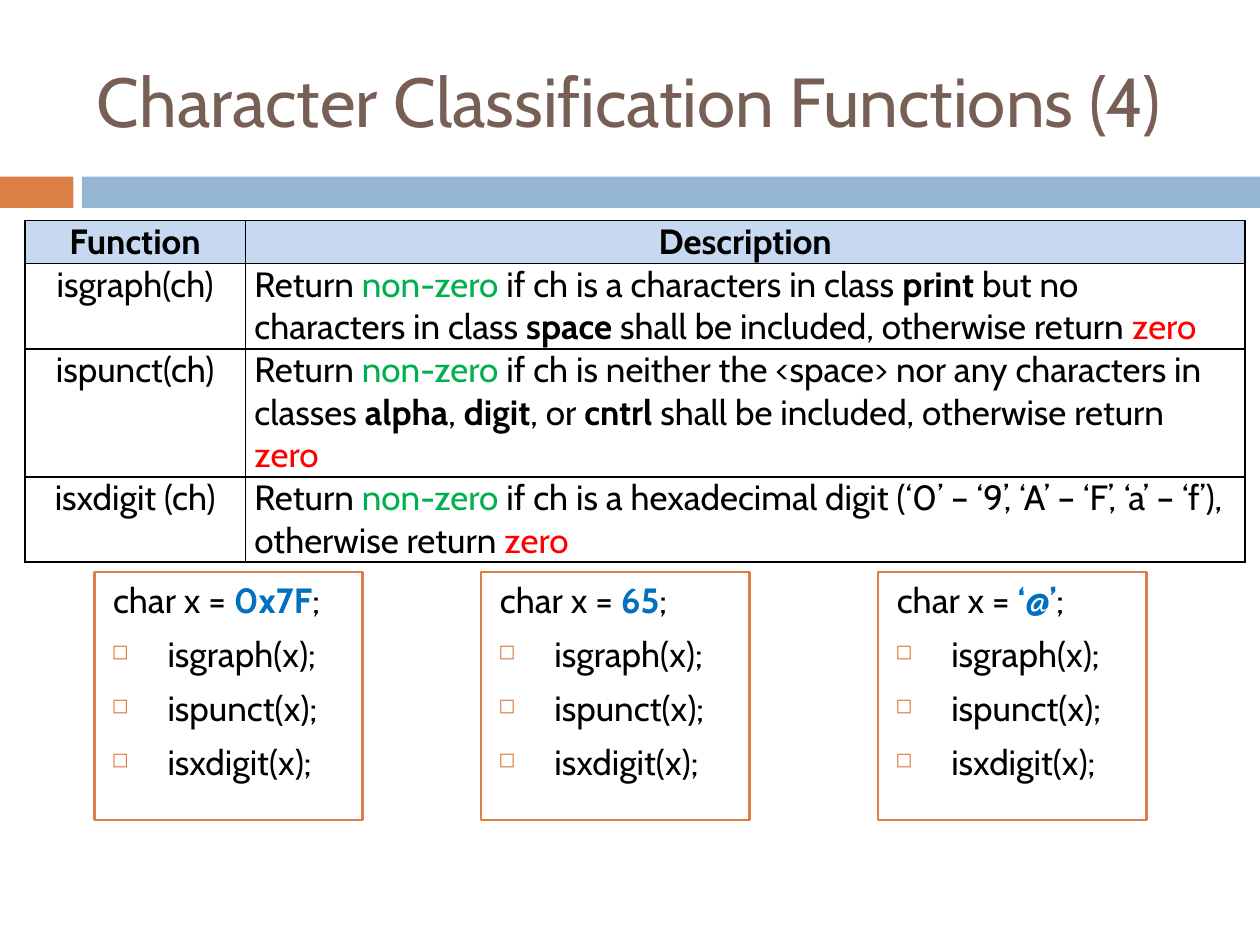
from dataclasses import dataclass

from lxml import etree
from pptx import Presentation
from pptx.dml.color import RGBColor
from pptx.enum.shapes import MSO_SHAPE
from pptx.enum.text import MSO_ANCHOR, MSO_AUTO_SIZE, PP_ALIGN
from pptx.oxml.ns import qn
from pptx.util import Cm, Pt

RECT = MSO_SHAPE.RECTANGLE
LEFT, CENTER = PP_ALIGN.LEFT, PP_ALIGN.CENTER
TOP, MIDDLE = MSO_ANCHOR.TOP, MSO_ANCHOR.MIDDLE
NO_AUTOFIT = MSO_AUTO_SIZE.NONE


@dataclass(frozen=True)
class Theme:
    font: str = "Cabin"
    title_size: float = 39.6
    body_size: float = 20
    title: str = "775F55"
    text: str = "000000"
    accent: str = "DD8047"
    band: str = "94B6D2"
    header: str = "C6D9F1"
    paper: str = "FFFFFF"
    yes: str = "00B050"
    no: str = "FF0000"
    value: str = "0070C0"


THEME = Theme()
# Run styles: (colour, bold)
PLAIN = (THEME.text, False)
BOLD = (THEME.text, True)
YES = (THEME.yes, False)
NO = (THEME.no, False)
VALUE = (THEME.value, True)


def returns(*condition):
    """Wrap the runs of a condition in the wording shared by all descriptions."""
    return [("Return ", PLAIN), ("non-zero", YES), *condition,
            ("otherwise return ", PLAIN), ("zero", NO)]


HEADERS = ("Function", "Description")
FUNCTIONS = [
    ("isgraph(ch)", returns(
        (" if ch is a characters in class ", PLAIN), ("print ", BOLD),
        ("but no characters in class ", PLAIN), ("space", BOLD),
        (" shall be included, ", PLAIN))),
    ("ispunct(ch)", returns(
        (" if ch is neither the <space> nor any characters in classes ", PLAIN),
        ("alpha", BOLD), (", ", PLAIN), ("digit", BOLD), (", or ", PLAIN),
        ("cntrl", BOLD), (" shall be included, ", PLAIN))),
    ("isxdigit (ch)", returns(
        (" if ch is a hexadecimal digit (‘0’ – ‘9’, ‘A’ – ‘F’, ‘a’ – ‘f’), ",
         PLAIN))),
]
EXAMPLES = [(1.9, "0x7F"), (9.7, "65"), (17.7, "‘@’")]
CALLS = (" isgraph(x);", " ispunct(x);", " isxdigit(x);")


class SlideBuilder:
    def __init__(self, slide, theme):
        self.slide = slide
        self.theme = theme

    def style(self, r, color, bold=False, size=None):
        r.font.name = self.theme.font
        r.font.size = Pt(size or self.theme.body_size)
        r.font.bold = bold
        r.font.color.rgb = RGBColor.from_string(color)

    def add_runs(self, p, runs, align=LEFT):
        p.alignment = align
        for text, (color, bold) in runs:
            r = p.add_run()
            r.text = text
            self.style(r, color, bold)

    def title(self, text, left, top, width, height):
        s = self.slide.shapes.title
        s.left, s.top, s.width, s.height = map(Cm, (left, top, width, height))
        tf = s.text_frame
        tf.text = text
        tf.auto_size = NO_AUTOFIT
        tf.vertical_anchor = MIDDLE
        p = tf.paragraphs[0]
        p.alignment = LEFT
        self.style(p.runs[0], self.theme.title, size=self.theme.title_size)

    def rect(self, left, top, width, height, fill, line=None):
        s = self.slide.shapes.add_shape(
            RECT, Cm(left), Cm(top), Cm(width), Cm(height))
        s.shadow.inherit = False
        s.fill.solid()
        s.fill.fore_color.rgb = RGBColor.from_string(fill)
        if line:
            s.line.color.rgb = RGBColor.from_string(line)
            s.line.width = Pt(1.5)
        else:
            s.line.fill.background()
        return s

    def indent(self, p, margin, first=0, bullet=None):
        """Set the paragraph indents in cm, with a small accent bullet if given."""
        pPr = p._p.get_or_add_pPr()
        pPr.set("marL", str(Cm(margin)))
        pPr.set("indent", str(Cm(first)))
        if bullet:
            color = etree.SubElement(pPr, qn("a:buClr"))
            etree.SubElement(color, qn("a:srgbClr"), val=self.theme.accent)
            etree.SubElement(pPr, qn("a:buSzPct"), val="60000")
            etree.SubElement(pPr, qn("a:buChar"), char=bullet)

    def example(self, left, top, width, height, value, calls):
        s = self.rect(left, top, width, height, self.theme.paper, self.theme.accent)
        tf = s.text_frame
        tf.word_wrap = True
        tf.vertical_anchor = TOP
        p = tf.paragraphs[0]
        p.space_before = Pt(7)
        self.indent(p, 0.13)
        self.add_runs(p, [("char x = ", PLAIN), (value, VALUE), (";", PLAIN)])
        for call in calls:
            p = tf.add_paragraph()
            p.space_before = Pt(7)
            self.indent(p, 1.07, -0.97, "◻")
            self.add_runs(p, [(call, PLAIN)])

    def borders(self, cell):
        tcPr = cell._tc.get_or_add_tcPr()
        for side in ("lnL", "lnR", "lnT", "lnB"):
            ln = etree.SubElement(tcPr, qn(f"a:{side}"), w=str(Pt(1)))
            fill = etree.SubElement(ln, qn("a:solidFill"))
            etree.SubElement(fill, qn("a:srgbClr"), val=self.theme.text)

    def cell(self, cell, runs, align, fill=None):
        cell.margin_left = cell.margin_right = Cm(0.18)
        cell.margin_top = cell.margin_bottom = 0
        self.borders(cell)
        if fill:
            cell.fill.solid()
            cell.fill.fore_color.rgb = RGBColor.from_string(fill)
        else:
            cell.fill.background()
        self.add_runs(cell.text_frame.paragraphs[0], runs, align)

    def table(self, left, top, widths, heights, total_height, headers, rows):
        frame = self.slide.shapes.add_table(
            len(heights), len(widths), Cm(left), Cm(top),
            Cm(sum(widths)), Cm(total_height))
        table = frame.table
        table.first_row = table.horz_banding = False
        for column, width in zip(table.columns, widths):
            column.width = Cm(width)
        for row, height in zip(table.rows, heights):
            row.height = Cm(height)
        frame.height = Cm(total_height)
        for i, header in enumerate(headers):
            self.cell(table.cell(0, i), [(header, BOLD)], CENTER, self.theme.header)
        for i, (name, description) in enumerate(rows, 1):
            self.cell(table.cell(i, 0), [(name, PLAIN)], CENTER)
            self.cell(table.cell(i, 1), description, LEFT)


def main():
    prs = Presentation()
    prs.slide_width, prs.slide_height = Cm(25.4), Cm(19.05)
    slide = prs.slides.add_slide(prs.slide_layouts[5])
    builder = SlideBuilder(slide, THEME)
    builder.rect(0, 3.56, 1.48, 0.63, THEME.accent)
    builder.rect(1.65, 3.56, 23.75, 0.63, THEME.band)
    builder.title("Character Classification Functions (4)", 1.7, 0.64, 22.66, 2.74)
    builder.table(0.5, 4.45, (4.45, 20.15), (0.58, 1.19, 1.19, 1.19), 5.92,
                  HEADERS, FUNCTIONS)
    for left, value in EXAMPLES:
        builder.example(left, 11.53, 5.41, 5, value, CALLS)
    prs.save("out.pptx")


if __name__ == "__main__":
    main()
